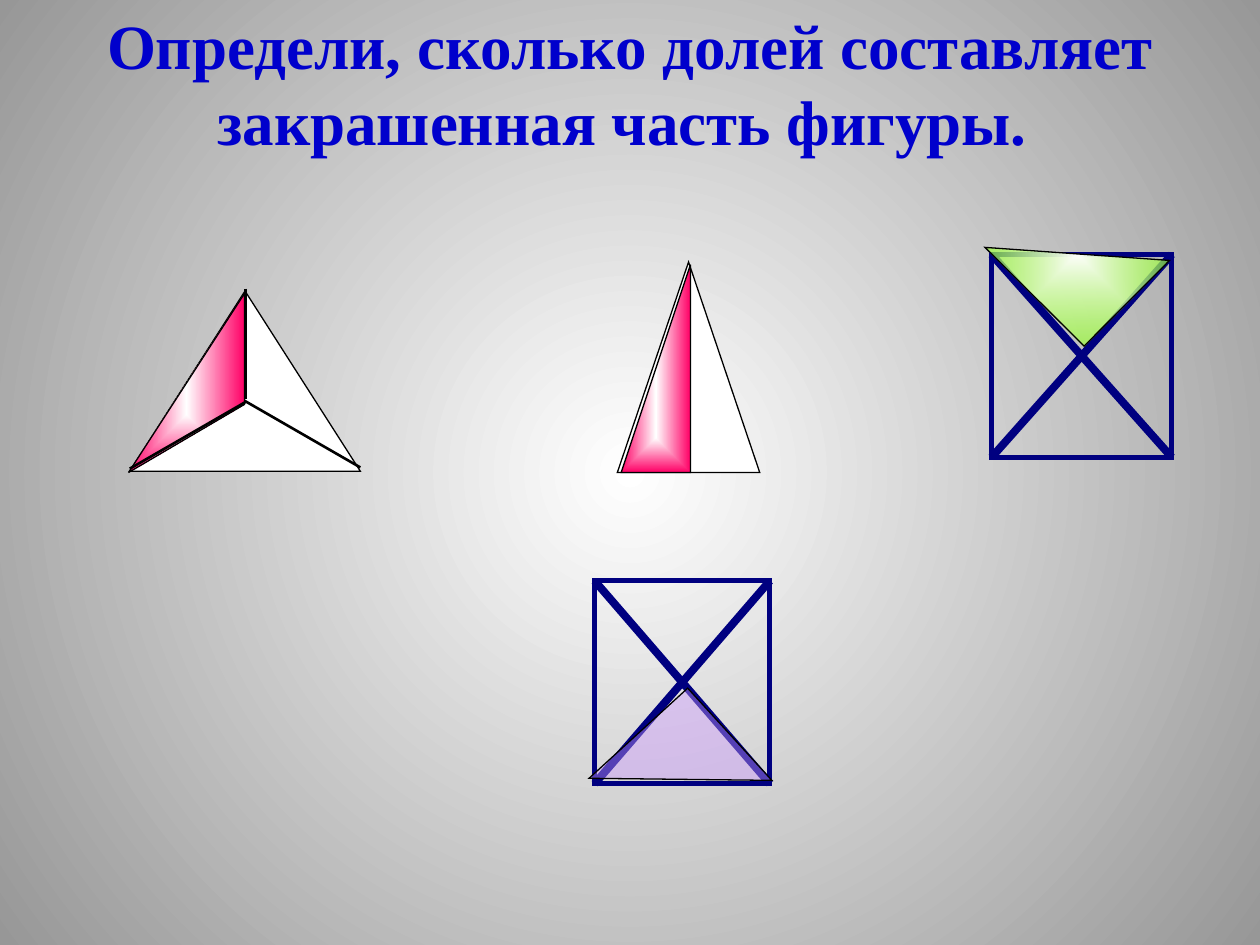
from dataclasses import dataclass

from lxml import etree
from pptx import Presentation
from pptx.dml.color import RGBColor
from pptx.enum.shapes import MSO_CONNECTOR, MSO_SHAPE
from pptx.enum.text import MSO_ANCHOR, MSO_AUTO_SIZE, PP_ALIGN
from pptx.oxml.ns import qn
from pptx.util import Inches, Pt

TRIANGLE = MSO_SHAPE.ISOSCELES_TRIANGLE
RIGHT_TRIANGLE = MSO_SHAPE.RIGHT_TRIANGLE
RECTANGLE = MSO_SHAPE.RECTANGLE
STRAIGHT = MSO_CONNECTOR.STRAIGHT
TITLE_ONLY = 5

Point = tuple[float, float]


@dataclass(frozen=True)
class Theme:
    font: str = "Times New Roman"
    title_size: float = 36
    title: str = "0000CC"
    white: str = "FFFFFF"
    backdrop: str = "979797"
    ink: str = "000000"
    navy: str = "000080"
    pink: str = "FF0066"
    green: str = "99FF33"
    violet: str = "CC99FF"
    thin: float = 0.75
    spoke: float = 1.5
    frame: float = 3
    diagonal: float = 4.5


@dataclass(frozen=True)
class Box:
    left: float
    top: float
    width: float
    height: float

    def lengths(self) -> list:
        return [Inches(v) for v in (self.left, self.top, self.width, self.height)]


@dataclass(frozen=True)
class CutTriangle:
    """A white triangle with one shaded part and dividing spokes."""
    box: Box
    shaded: list[Point]
    spokes: list[tuple[Point, Point]]


@dataclass(frozen=True)
class CutSquare:
    """A square with both diagonals and one shaded quarter."""
    box: Box
    quarter: Box
    rotation: float
    color: str
    opacity: int
    shaded_from_white: bool


THEME = Theme()

TRIANGLES = [
    CutTriangle(Box(1.03, 2.31, 1.83, 1.43),
                [(1.94, 2.33), (1.94, 3.21), (1.02, 3.75)],
                [((1.95, 2.29), (1.95, 3.17)),
                 ((2.86, 3.71), (1.94, 3.18)),
                 ((1.95, 3.19), (1.03, 3.72))]),
    CutTriangle(Box(4.9, 2.08, 1.13, 1.67),
                [(5.48, 2.1), (5.48, 3.75), (4.93, 3.75)], []),
]

SQUARES = [
    CutSquare(Box(7.87, 2.02, 1.43, 1.61), Box(8.07, 1.46, 0.96, 1.11),
              314.9, THEME.green, 66, True),
    CutSquare(Box(4.72, 4.61, 1.39, 1.61), Box(4.87, 5.69, 1.06, 0.99),
              137.6, THEME.violet, 42, False),
]


def set_opacity(color_element, percent: int) -> None:
    if percent < 100:
        etree.SubElement(color_element, qn("a:alpha"), val=str(percent * 1000))


def fill_from_center(fill, owner, kind: str, outer: str, opacity: int = 100) -> None:
    """Gradient from a white centre to the outer colour."""
    fill.gradient()
    gradient = next(owner.iter(qn("a:gradFill")))
    for child in list(gradient):
        gradient.remove(child)
    stops = etree.SubElement(gradient, qn("a:gsLst"))
    for position, color, alpha in ((0, THEME.white, 100), (100000, outer, opacity)):
        stop = etree.SubElement(stops, qn("a:gs"), pos=str(position))
        set_opacity(etree.SubElement(stop, qn("a:srgbClr"), val=color), alpha)
    focus = etree.SubElement(gradient, qn("a:path"))
    focus.set("path", kind)
    etree.SubElement(focus, qn("a:fillToRect"), l="50000", t="50000", r="50000", b="50000")


def fill_solid(shape, color: str, opacity: int = 100) -> None:
    shape.fill.solid()
    shape.fill.fore_color.rgb = RGBColor.from_string(color)
    set_opacity(next(shape._element.spPr.iter(qn("a:srgbClr"))), opacity)


def outline(shape, color: str, width: float) -> None:
    shape.shadow.inherit = False
    shape.line.color.rgb = RGBColor.from_string(color)
    shape.line.width = Pt(width)
    line = shape._element.spPr.find(qn("a:ln"))
    etree.SubElement(line, qn("a:miter"), lim="800000")


def draw_line(shapes, start: Point, end: Point, color: str, width: float) -> None:
    line = shapes.add_connector(STRAIGHT, *[Inches(v) for v in (*start, *end)])
    line.line.color.rgb = RGBColor.from_string(color)
    line.line.width = Pt(width)
    etree.SubElement(line._element.spPr, qn("a:effectLst"))


def draw_triangle(page, figure: CutTriangle) -> None:
    shapes = page.shapes.add_group_shape().shapes
    whole = shapes.add_shape(TRIANGLE, *figure.box.lengths())
    fill_solid(whole, THEME.white)
    outline(whole, THEME.ink, THEME.thin)

    corners = [(Inches(x), Inches(y)) for x, y in figure.shaded]
    builder = shapes.build_freeform(*corners[0])
    builder.add_line_segments(corners[1:], close=True)
    part = builder.convert_to_shape()
    fill_from_center(part.fill, part._element, "rect", THEME.pink)
    outline(part, THEME.ink, THEME.thin)

    for start, end in figure.spokes:
        draw_line(shapes, start, end, THEME.ink, THEME.spoke)


def draw_square(page, figure: CutSquare) -> None:
    shapes = page.shapes.add_group_shape().shapes
    box = figure.box
    frame = shapes.add_shape(RECTANGLE, *box.lengths())
    frame.fill.background()
    outline(frame, THEME.navy, THEME.frame)

    right, bottom = box.left + box.width, box.top + box.height
    for start_y, end_y in ((box.top, bottom), (bottom, box.top)):
        draw_line(shapes, (box.left, start_y), (right, end_y), THEME.navy, THEME.diagonal)

    quarter = shapes.add_shape(RIGHT_TRIANGLE, *figure.quarter.lengths())
    quarter.rotation = figure.rotation
    if figure.shaded_from_white:
        fill_from_center(quarter.fill, quarter._element, "shape", figure.color, figure.opacity)
    else:
        fill_solid(quarter, figure.color, figure.opacity)
    outline(quarter, THEME.ink, THEME.thin)


def write_title(page, text: str) -> None:
    title = page.shapes.title
    title.left, title.top, title.width, title.height = Box(0, 0, 10, 1.31).lengths()
    frame = title.text_frame
    frame.text = text
    frame.word_wrap = True
    frame.auto_size = MSO_AUTO_SIZE.SHAPE_TO_FIT_TEXT
    frame.vertical_anchor = MSO_ANCHOR.MIDDLE
    para = frame.paragraphs[0]
    para.alignment = PP_ALIGN.CENTER
    para.font.name = THEME.font
    para.font.size = Pt(THEME.title_size)
    para.font.bold = True
    para.font.color.rgb = RGBColor.from_string(THEME.title)


def main() -> None:
    deck = Presentation()
    deck.slide_width, deck.slide_height = Inches(10), Inches(7.5)
    page = deck.slides.add_slide(deck.slide_layouts[TITLE_ONLY])

    # Backdrop and title
    fill_from_center(page.background.fill, page._element, "circle", THEME.backdrop)
    write_title(page, "Определи, сколько долей составляет закрашенная часть фигуры. ")

    # Figures with a shaded part
    for triangle in TRIANGLES:
        draw_triangle(page, triangle)
    for square in SQUARES:
        draw_square(page, square)

    deck.save("out.pptx")


if __name__ == "__main__":
    main()
